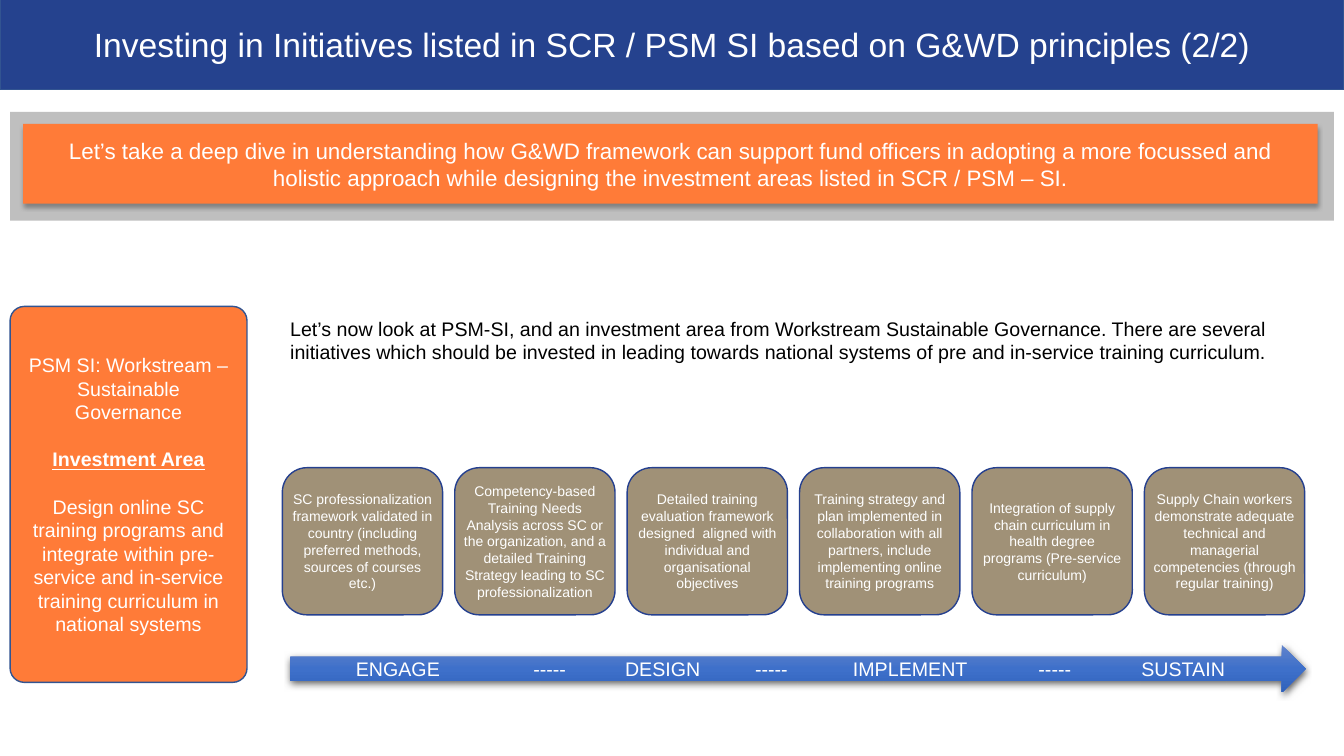
from copy import deepcopy
from dataclasses import dataclass

from lxml import etree
from pptx import Presentation
from pptx import util as u
from pptx.dml.color import RGBColor
from pptx.enum import shapes, text
from pptx.oxml import ns

PX = 9144
FONT = "Arial"
WHITE, BLACK = "FFFFFF", "000000"
NAVY, BORDER, STEP_BORDER = "25428E", "325491", "25408F"
ORANGE, GREY, TAUPE = "FF7B38", "BFBFBF", "A09177"
ARROW_STOPS = [(0, "6183CB"), (0.5, "3E70CA"), (1, "3062BB")]
SHAPE = shapes.MSO_SHAPE


@dataclass
class Area:
    left: int
    top: int
    width: int
    height: int

    def emu(self) -> list[int]:
        return [side * PX for side in (self.left, self.top, self.width, self.height)]


@dataclass
class Line:
    words: str
    size: int
    colour: str = WHITE
    align: text.PP_ALIGN = text.PP_ALIGN.CENTER
    strong: bool = False
    before: int = 0
    spacing: float = 1.0


@dataclass
class Shadow:
    alpha: int
    blur: float
    distance: float


def rgb(colour: str) -> RGBColor:
    return RGBColor.from_string(colour)


def write(box, lines: list[Line], anchor=text.MSO_ANCHOR.MIDDLE, inset: int | None = None) -> None:
    frame = box.text_frame
    frame.word_wrap = True
    frame.vertical_anchor = anchor
    if inset is not None:
        frame.margin_left = frame.margin_right = inset * PX
        frame.margin_top = frame.margin_bottom = inset * PX
    for index, line in enumerate(lines):
        para = frame.add_paragraph() if index else frame.paragraphs[0]
        para.alignment = line.align
        para.line_spacing = line.spacing
        para.space_before = u.Pt(line.before)
        span = para.add_run()
        span.text = line.words
        span.font.name = FONT
        span.font.size = u.Pt(line.size)
        span.font.color.rgb = rgb(line.colour)
        span.font.bold = span.font.underline = line.strong


def add_box(page, kind, area: Area, fill: str, border: str | None = None, shadow: Shadow | None = None):
    box = page.shapes.add_shape(kind, *area.emu())
    box.shadow.inherit = False
    box.fill.solid()
    box.fill.fore_color.rgb = rgb(fill)
    if border:
        box.line.color.rgb = rgb(border)
        box.line.width = u.Pt(1)
    else:
        box.line.fill.background()
    if shadow:
        add_shadow(box, shadow)
    return box


def add_shadow(box, shadow: Shadow) -> None:
    effects = box._element.spPr.find(ns.qn("a:effectLst"))
    outer = etree.SubElement(effects, ns.qn("a:outerShdw"), blurRad=str(u.Pt(shadow.blur)),
                             dist=str(u.Pt(shadow.distance)), dir="5400000", rotWithShape="0")
    colour = etree.SubElement(outer, ns.qn("a:srgbClr"), val=BLACK)
    etree.SubElement(colour, ns.qn("a:alpha"), val=str(shadow.alpha * 1000))


def shade(box, stops: list[tuple[float, str]]) -> None:
    box.fill.gradient()
    box.fill.gradient_angle = 270
    stop_list = box._element.spPr.find(".//" + ns.qn("a:gsLst"))
    while len(stop_list) < len(stops):
        stop_list.append(deepcopy(stop_list[0]))
    for stop, (position, colour) in zip(box.fill.gradient_stops, stops):
        stop.position = position
        stop.color.rgb = rgb(colour)


def set_tabs(box, positions: list[int]) -> None:
    properties = box.text_frame.paragraphs[0]._p.get_or_add_pPr()
    tabs = etree.SubElement(properties, ns.qn("a:tabLst"))
    for position in positions:
        etree.SubElement(tabs, ns.qn("a:tab"), pos=str(position * PX), algn="l")


STEPS = [
    "SC professionalization framework validated in country (including preferred methods, sources of courses etc.)",
    "Competency-based Training Needs Analysis across SC or the organization, and a detailed Training Strategy "
    "leading to SC professionalization",
    "Detailed training evaluation framework designed  aligned with individual and organisational objectives",
    "Training strategy and plan implemented in collaboration with all partners, include implementing online "
    "training programs",
    "Integration of supply chain curriculum in health degree programs (Pre-service curriculum)",
    "Supply Chain workers demonstrate adequate technical and managerial competencies (through regular training)",
]
WORKSTREAM = [
    Line("PSM SI: Workstream – Sustainable Governance", 14),
    Line("Investment Area", 14, strong=True, before=17),
    Line("Design online SC training programs and integrate within pre-service and in-service training curriculum "
         "in national systems", 14, before=17),
]
PHASES = ["ENGAGE", "-----", "DESIGN", "-----", "IMPLEMENT", "-----", "SUSTAIN"]
PHASE_TABS = [176, 267, 396, 493, 677, 779]


def main() -> None:
    deck = Presentation()
    deck.slide_width, deck.slide_height = 1333 * PX, 750 * PX
    page = deck.slides.add_slide(deck.slide_layouts[6])

    add_box(page, SHAPE.RECTANGLE, Area(0, -2, 1333, 91), NAVY, BORDER)
    title = page.shapes.add_textbox(*Area(56, 8, 1221, 76).emu())
    write(title, [Line("Investing in Initiatives listed in SCR / PSM SI based on G&WD principles (2/2)", 24,
                       spacing=0.9)])

    add_box(page, SHAPE.RECTANGLE, Area(10, 111, 1313, 108), GREY)
    banner = add_box(page, SHAPE.RECTANGLE, Area(23, 123, 1284, 79), ORANGE, shadow=Shadow(32, 3.5, 2.2))
    write(banner, [Line("Let’s take a deep dive in understanding how G&WD framework can support fund officers in "
                        "adopting a more focussed and holistic approach while designing the investment areas "
                        "listed in SCR / PSM – SI.", 16)])

    card = add_box(page, SHAPE.ROUNDED_RECTANGLE, Area(10, 304, 235, 373), ORANGE, BORDER)
    card.adjustments[0] = 0.06
    write(card, WORKSTREAM)

    intro = page.shapes.add_textbox(*Area(278, 309, 1017, 81).emu())
    write(intro, [Line("Let’s now look at PSM-SI, and an investment area from Workstream Sustainable Governance. "
                       "There are several initiatives which should be invested in leading towards national "
                       "systems of pre and in-service training curriculum.", 14, BLACK, text.PP_ALIGN.LEFT)],
          anchor=text.MSO_ANCHOR.TOP)

    for index, words in enumerate(STEPS):
        step = add_box(page, SHAPE.ROUNDED_RECTANGLE, Area(280 + 171 * index, 464, 159, 146), TAUPE, STEP_BORDER)
        write(step, [Line(words, 10)], inset=0)

    arrow = add_box(page, SHAPE.RIGHT_ARROW, Area(288, 640, 1007, 47), NAVY, shadow=Shadow(63, 4.5, 1.5))
    shade(arrow, ARROW_STOPS)
    write(arrow, [Line("\t".join(PHASES), 14, align=text.PP_ALIGN.LEFT)])
    arrow.text_frame.margin_left = 65 * PX
    set_tabs(arrow, PHASE_TABS)

    deck.save("out.pptx")


if __name__ == "__main__":
    main()
